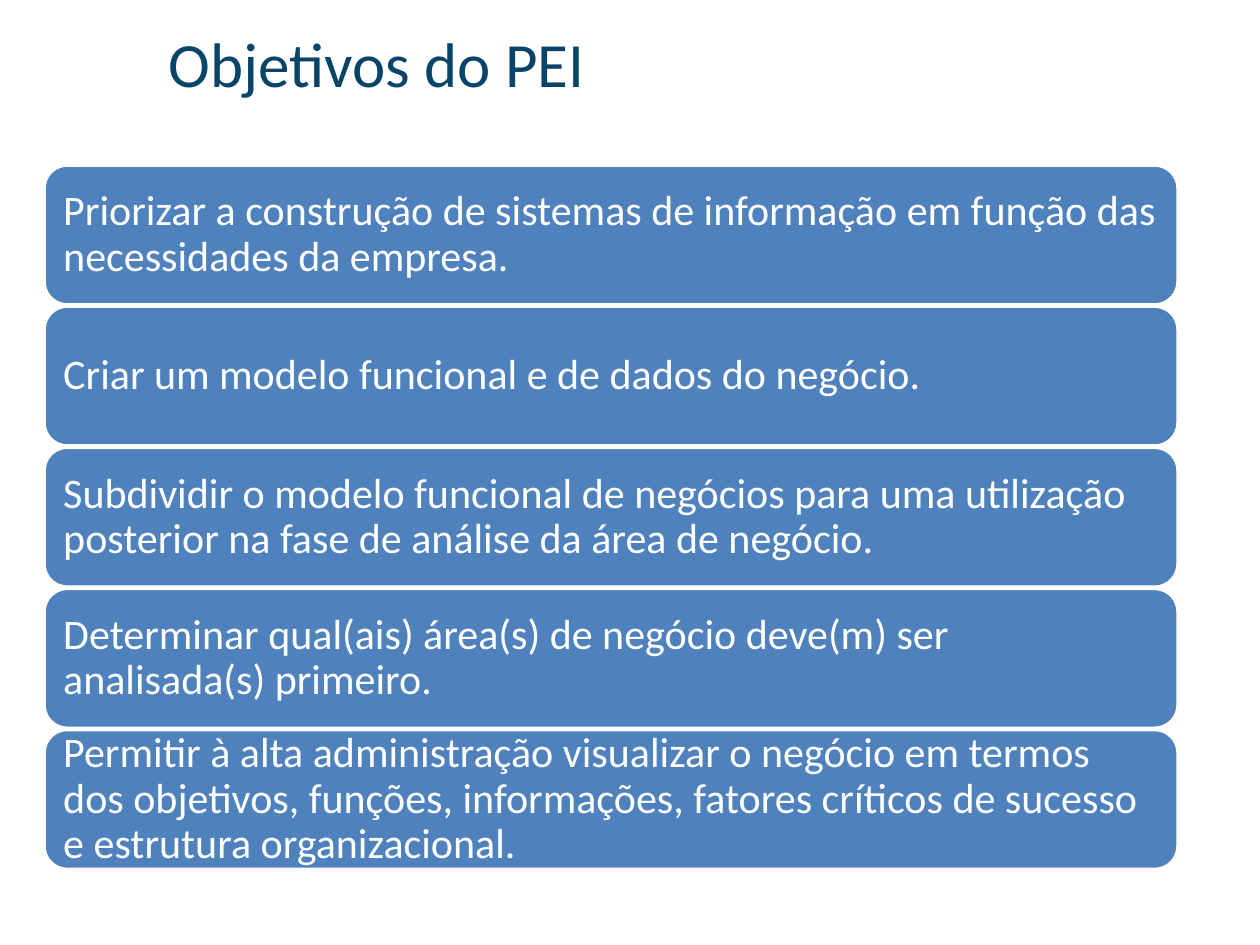
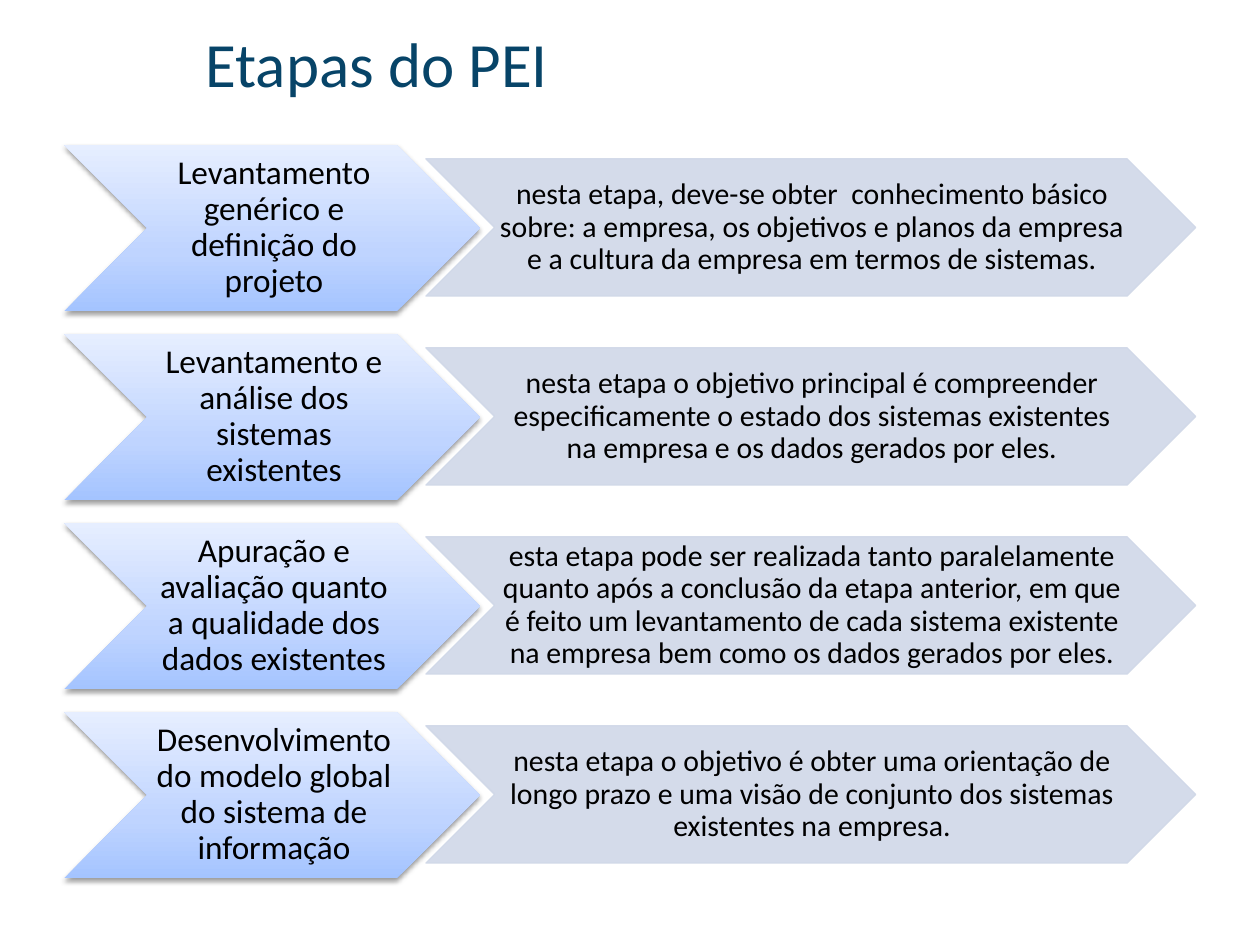
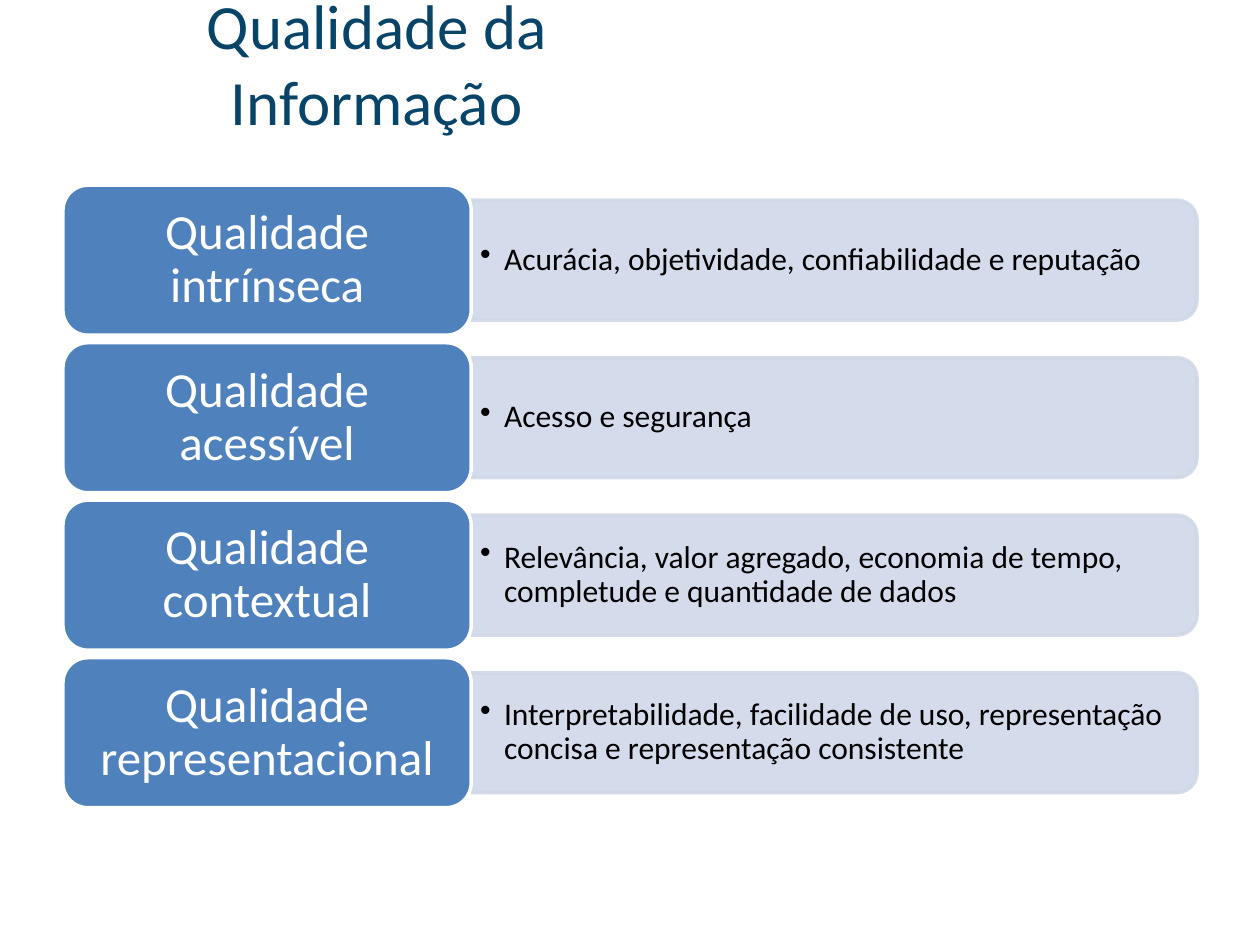
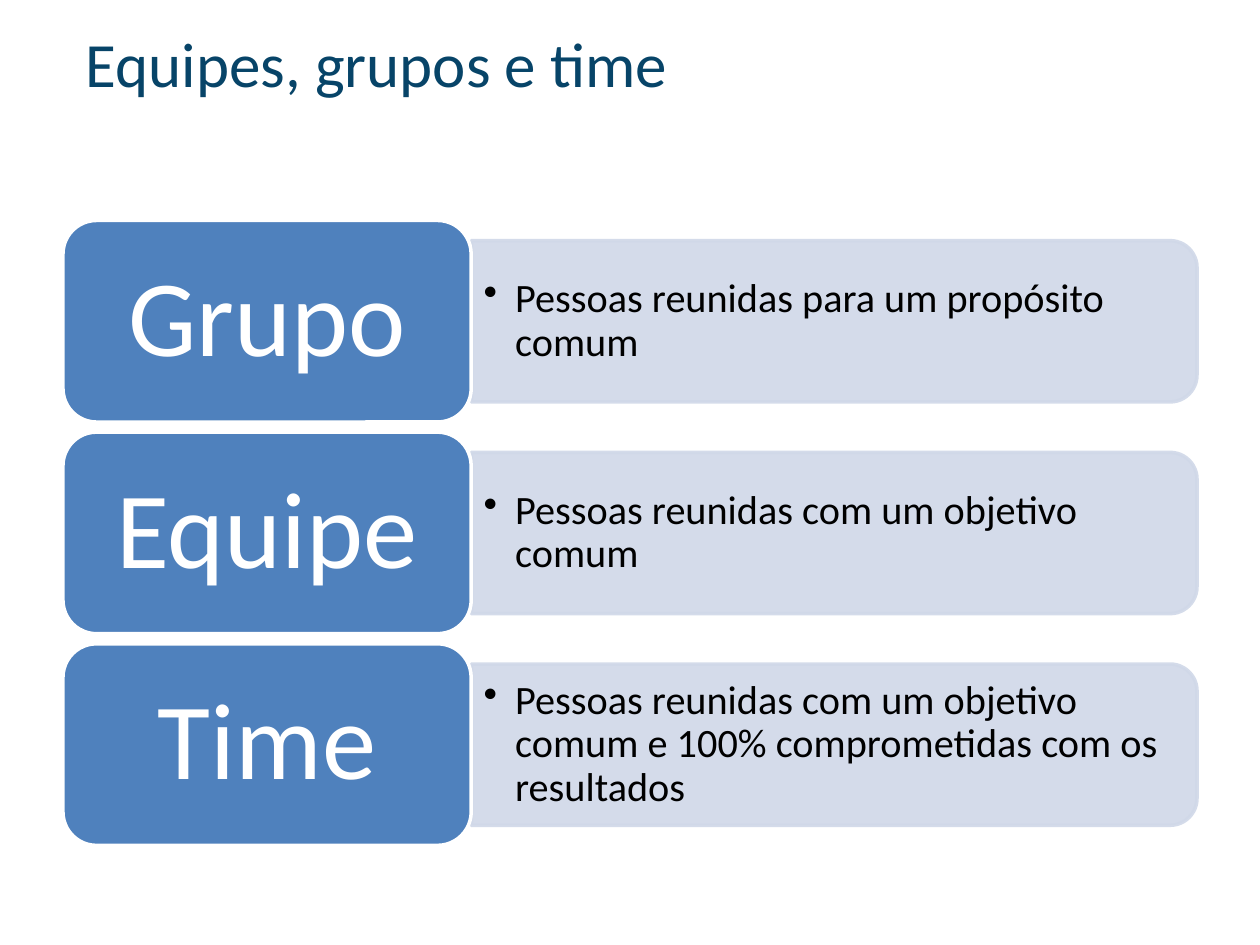
from copy import deepcopy

from lxml.etree import SubElement
from pptx import Presentation
from pptx.dml.color import RGBColor
from pptx.enum.shapes import MSO_SHAPE as Shape
from pptx.enum.text import MSO_ANCHOR as Anchor, MSO_AUTO_SIZE as AutoSize, PP_ALIGN as Align
from pptx.oxml.ns import qn
from pptx.util import Inches, Pt

FONT = "Calibri"
TITLE_COLOUR = "074468"
BLUE = "4F81BD"
PALE = "D0D8E8"
WHITE = "FFFFFF"
BLACK = "000000"
STEP_GRADIENT = [(0, "A4C4FF"), (0.35, "BFD4FF"), (1, "E6EEFF")]

OBJECTIVES = [
    "Priorizar a construção de sistemas de informação em função das necessidades da empresa.",
    "Criar um modelo funcional e de dados do negócio.",
    "Subdividir o modelo funcional de negócios para uma utilização posterior na fase de análise "
    "da área de negócio.",
    "Determinar qual(ais) área(s) de negócio deve(m) ser analisada(s) primeiro.",
    "Permitir à alta administração visualizar o negócio em termos dos objetivos, funções, "
    "informações, fatores críticos de sucesso e estrutura organizacional.",
]
STEPS = [
    ("Levantamento genérico e definição do projeto",
     "nesta etapa, deve-se obter  conhecimento básico sobre: a empresa, os objetivos e planos "
     "da empresa e a cultura da empresa em termos de sistemas."),
    ("Levantamento e análise dos sistemas existentes",
     "nesta etapa o objetivo principal é compreender especificamente o estado dos sistemas "
     "existentes na empresa e os dados gerados por eles."),
    ("Apuração e avaliação quanto a qualidade dos dados existentes",
     "esta etapa pode ser realizada tanto paralelamente quanto após a conclusão da etapa "
     "anterior, em que é feito um levantamento de cada sistema existente na empresa bem como "
     "os dados gerados por eles."),
    ("Desenvolvimento do modelo global do sistema de informação",
     "nesta etapa o objetivo é obter uma orientação de longo prazo e uma visão de conjunto dos "
     "sistemas existentes na empresa."),
]
QUALITIES = [
    ("Qualidade intrínseca", "Acurácia, objetividade, confiabilidade e reputação"),
    ("Qualidade acessível", "Acesso e segurança"),
    ("Qualidade contextual",
     "Relevância, valor agregado, economia de tempo, completude e quantidade de dados"),
    ("Qualidade representacional",
     "Interpretabilidade, facilidade de uso, representação concisa e representação consistente"),
]
TEAMS = [
    ("Grupo", "Pessoas reunidas para um propósito comum"),
    ("Equipe", "Pessoas reunidas com um objetivo comum"),
    ("Time", "Pessoas reunidas com um objetivo comum e 100% comprometidas com os resultados"),
]


def rgb(colour):
    return RGBColor.from_string(colour)


def set_opacity(fill_element, percent):
    colour = fill_element.find(".//" + qn("a:srgbClr"))
    SubElement(colour, qn("a:alpha"), val=str(percent * 1000))


class Deck:
    def __init__(self):
        self.presentation = Presentation()
        self.presentation.slide_width = Inches(10)
        self.presentation.slide_height = Inches(7.5)
        self.slide = None

    def add_slide(self, title):
        self.slide = self.presentation.slides.add_slide(self.presentation.slide_layouts[5])
        shape = self.slide.shapes.title
        shape.left, shape.top = Inches(0.5), Inches(0)
        shape.width, shape.height = Inches(4.98), Inches(0.99)
        self.set_text(shape, title, 36, TITLE_COLOUR, spacing=1)

    def set_text(self, shape, text, size, colour, insets=(0.1, 0.05, 0.1, 0.05),
                 align=Align.CENTER, spacing=0.9, bullet_indent=None):
        frame = shape.text_frame
        frame.word_wrap = True
        frame.auto_size = AutoSize.NONE
        frame.vertical_anchor = Anchor.MIDDLE
        (frame.margin_left, frame.margin_top,
         frame.margin_right, frame.margin_bottom) = map(Inches, insets)
        paragraph = frame.paragraphs[0]
        paragraph.text = text
        if bullet_indent:
            properties = paragraph._p.get_or_add_pPr()
            properties.set("marL", str(Inches(bullet_indent)))
            properties.set("indent", str(-Inches(bullet_indent)))
            SubElement(properties, qn("a:buChar"), char="•")
        paragraph.alignment = align
        paragraph.line_spacing = spacing
        paragraph.font.name = FONT
        paragraph.font.size = Pt(size)
        paragraph.font.color.rgb = rgb(colour)

    def shape(self, kind, left, top, width, height):
        shape = self.slide.shapes.add_shape(
            kind, Inches(left), Inches(top), Inches(width), Inches(height))
        shape.shadow.inherit = False
        return shape

    def paint(self, shape, fill, line, line_width, opacity=100):
        shape.fill.solid()
        shape.fill.fore_color.rgb = rgb(fill)
        shape.line.color.rgb = rgb(line)
        shape.line.width = Pt(line_width)
        if opacity < 100:
            properties = shape._element.spPr
            set_opacity(properties.find(qn("a:solidFill")), opacity)
            set_opacity(properties.find(qn("a:ln")), opacity)

    def card(self, left, top, width, height, text, size, insets, align=Align.CENTER):
        card = self.shape(Shape.ROUNDED_RECTANGLE, left, top, width, height)
        self.paint(card, BLUE, WHITE, 2)
        self.set_text(card, text, size, WHITE, insets, align)

    def step_chevron(self, left, top, width, height, text):
        chevron = self.shape(Shape.CHEVRON, left, top, width, height)
        chevron.line.fill.background()
        chevron.fill.gradient()
        chevron.fill.gradient_angle = 90
        properties = chevron._element.spPr
        stop_list = properties.find(".//" + qn("a:gsLst"))
        stop_list.insert(1, deepcopy(stop_list[0]))
        for stop, (position, colour) in zip(chevron.fill.gradient_stops, STEP_GRADIENT):
            stop.position = position
            stop.color.rgb = rgb(colour)
        shadow = SubElement(properties.find(qn("a:effectLst")), qn("a:outerShdw"),
                            blurRad=str(Pt(3.1)), dist=str(Pt(1.6)), dir="5400000",
                            rotWithShape="0")
        SubElement(shadow, qn("a:srgbClr"), val=BLACK)
        set_opacity(shadow, 38)
        self.set_text(chevron, text, 19, BLACK, (0.03, 0.01, 0, 0.01))

    def detail_chevron(self, left, top, width, height, text):
        chevron = self.shape(Shape.CHEVRON, left, top, width, height)
        self.paint(chevron, PALE, PALE, 0.75, opacity=90)
        self.set_text(chevron, text, 17, BLACK, (0.02, 0.01, 0, 0.01))

    def bullet_bar(self, left, middle, width, height, text, size, inset, indent):
        bar = self.shape(Shape.ROUND_2_SAME_RECTANGLE, left + (width - height) / 2,
                         middle - width / 2, height, width)
        bar.rotation = 90
        self.paint(bar, PALE, PALE, 2, opacity=90)
        text_height = 0.9 * height
        box = self.slide.shapes.add_textbox(
            Inches(left), Inches(middle - text_height / 2),
            Inches(width - 0.05), Inches(text_height))
        self.set_text(box, text, size, BLACK, (inset, inset / 2, inset, inset / 2),
                      Align.LEFT, bullet_indent=indent)

    def definition_rows(self, rows, top, height, gap, label_size, label_inset,
                        text_size, text_inset, indent):
        for index, (label, text) in enumerate(rows):
            row_top = top + index * (height + gap)
            self.bullet_bar(3.74, row_top + height / 2, 5.76, 0.8 * height,
                            text, text_size, text_inset, indent)
            self.card(0.5, row_top, 3.24, height, label, label_size,
                      (label_inset, label_inset / 2, label_inset, label_inset / 2))


def main():
    deck = Deck()

    deck.add_slide("Objetivos do PEI")
    for index, objective in enumerate(OBJECTIVES):
        deck.card(0.35, 1.31 + index * 1.12, 9, 1.11, objective, 24, (0.1,) * 4, Align.LEFT)

    deck.add_slide("Etapas do PEI")
    for index, (step, detail) in enumerate(STEPS):
        top = 1.15 + index * 1.5
        deck.step_chevron(0.51, top, 3.3, 1.32, step)
        deck.detail_chevron(3.38, top + 0.11, 6.11, 1.09, detail)

    deck.add_slide("Qualidade da Informação")
    deck.definition_rows(QUALITIES, top=1.47, height=1.19, gap=0.06, label_size=28,
                         label_inset=0.12, text_size=18, text_inset=0.07, indent=0.19)

    deck.add_slide("Equipes, grupos e time")
    deck.definition_rows(TEAMS, top=1.75, height=1.6, gap=0.08, label_size=62,
                         label_inset=0.26, text_size=23, text_inset=0.1, indent=0.25)

    deck.presentation.save("out.pptx")


if __name__ == "__main__":
    main()
